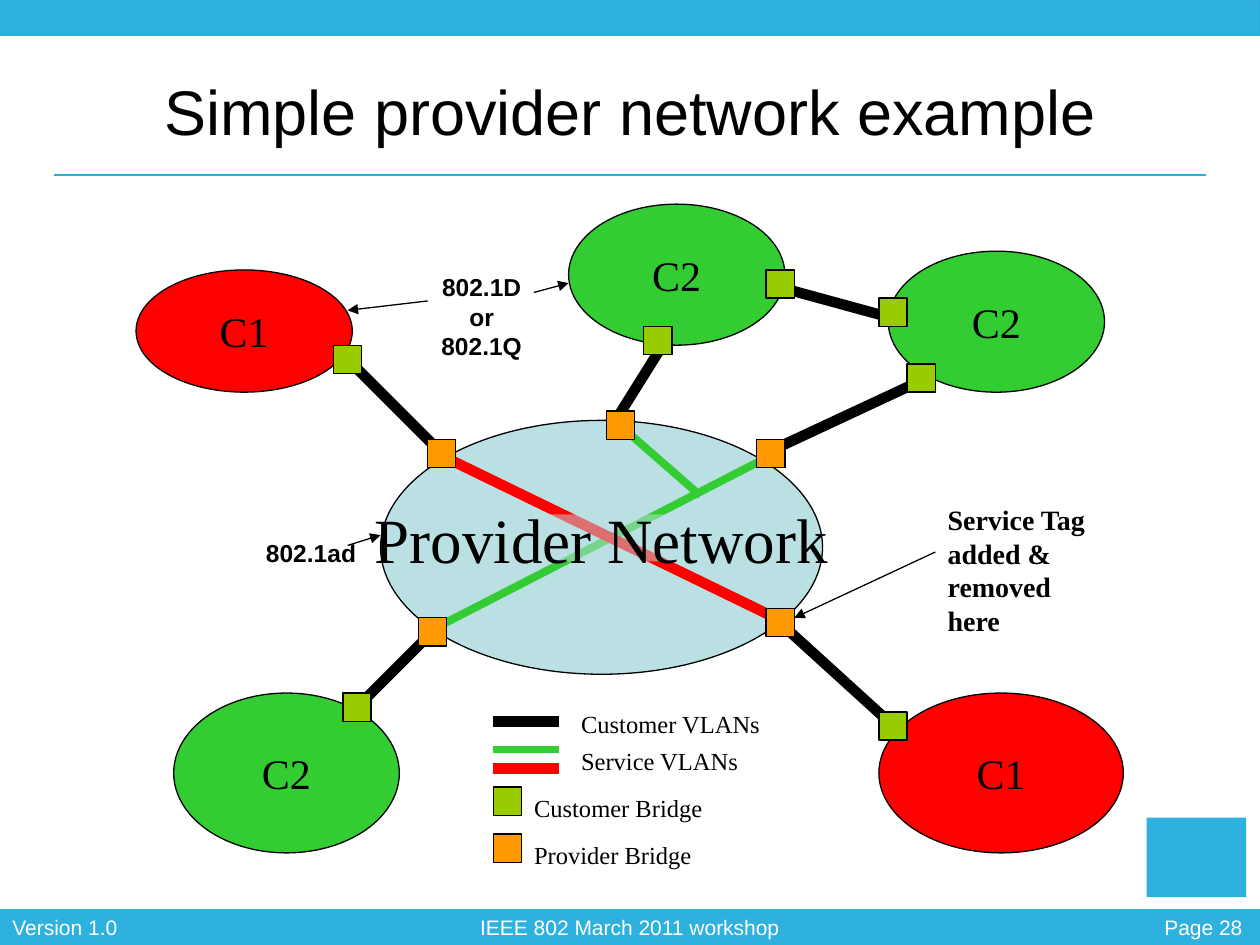
from pptx import Presentation
from pptx.dml.color import RGBColor
from pptx.enum.shapes import MSO_CONNECTOR, MSO_SHAPE
from pptx.enum.text import MSO_ANCHOR, PP_ALIGN
from pptx.oxml.ns import qn
from pptx.util import Inches, Pt
from lxml.etree import SubElement

BLACK = RGBColor(0x00, 0x00, 0x00)
WHITE = RGBColor(0xFF, 0xFF, 0xFF)
BAR_BLUE = RGBColor(0x2F, 0xB1, 0xDF)
RULE_BLUE = RGBColor(0x2F, 0xAD, 0xDF)
GREEN = RGBColor(0x33, 0xCC, 0x33)
RED = RGBColor(0xFF, 0x00, 0x00)
PALE_BLUE = RGBColor(0xBB, 0xE0, 0xE3)
LIME = RGBColor(0x99, 0xCC, 0x00)
ORANGE = RGBColor(0xFF, 0x99, 0x00)

SANS, SERIF = "Arial", "Times New Roman"
WIDTH, HEIGHT = Inches(10), Inches(7.5)
UNIT = WIDTH / 134
LEFT, TOP = Inches(1.08), Inches(1.62)
BAR_HEIGHT = Inches(0.28)
FOOTER_TOP, FOOTER_HEIGHT = Inches(7.21), Inches(0.3)
BRIDGE = 3


def grid(col, row):
    return round(LEFT + col * UNIT), round(TOP + row * UNIT)


def grid_box(col, row, cols, rows):
    return *grid(col, row), round(cols * UNIT), round(rows * UNIT)


def write(sp, text, size, font=SERIF, color=BLACK, bold=False,
          align=PP_ALIGN.LEFT, anchor=MSO_ANCHOR.TOP, wrap=False):
    tf = sp.text_frame
    tf.text = text
    tf.word_wrap = wrap
    tf.vertical_anchor = anchor
    for p in tf.paragraphs:
        p.alignment = align
        for r in p.runs:
            r.font.size = Pt(size)
            r.font.name = font
            r.font.bold = bold
            r.font.color.rgb = color


def add_text(s, box, text, size, **style):
    write(s.shapes.add_textbox(*box), text, size, **style)


def add_block(s, kind, box, fill, line=None, text="", size=24):
    sp = s.shapes.add_shape(kind, *box)
    sp.shadow.inherit = False
    sp.fill.solid()
    sp.fill.fore_color.rgb = fill
    if line is None:
        sp.line.fill.background()
    else:
        sp.line.color.rgb = line
        sp.line.width = Pt(0.75)
    if text:
        write(sp, text, size, align=PP_ALIGN.CENTER, anchor=MSO_ANCHOR.MIDDLE)
    return sp


def add_line(s, start, end, color=BLACK, width=0.75, arrow=False):
    c = s.shapes.add_connector(MSO_CONNECTOR.STRAIGHT, *start, *end)
    c.line.color.rgb = color
    c.line.width = Pt(width)
    if arrow:
        SubElement(c.line._get_or_add_ln(), qn("a:tailEnd"), type="triangle")
    SubElement(c._element.spPr, qn("a:effectLst"))


def add_frame(s):
    for y, line in ((HEIGHT - BAR_HEIGHT, BAR_BLUE), (0, RULE_BLUE)):
        add_block(s, MSO_SHAPE.RECTANGLE, (0, y, WIDTH, BAR_HEIGHT), BAR_BLUE, line)
    add_line(s, (Inches(0.43), Inches(1.39)), (Inches(9.57), Inches(1.39)), RULE_BLUE)
    for text, x, w, align in [
        ("Version 1.0", 0, 1.2, PP_ALIGN.LEFT),
        ("IEEE 802 March 2011 workshop", 0, 10, PP_ALIGN.CENTER),
        ("Page 28", 8.7, 1.26, PP_ALIGN.RIGHT),
    ]:
        add_text(s, (Inches(x), FOOTER_TOP, Inches(w), FOOTER_HEIGHT), text, 12,
                 font=SANS, color=WHITE, align=align, wrap=True)
    emblem = Inches(9.1), Inches(6.49), Inches(0.79), Inches(0.63)
    add_block(s, MSO_SHAPE.RECTANGLE, emblem, BAR_BLUE)


def add_title(s, text):
    title = s.shapes.title
    title.left, title.top = Inches(0.5), Inches(0.44)
    title.width, title.height = Inches(9), Inches(0.87)
    write(title, text, 36, font=SANS, align=PP_ALIGN.CENTER,
          anchor=MSO_ANCHOR.MIDDLE, wrap=True)


def add_networks(s):
    for text, fill, *cells in [
        ("C2", GREEN, 4, 52, 24, 17),
        ("C2", GREEN, 80, 5, 23, 15),
        ("C2", GREEN, 46, 0, 23, 15),
        ("C1", RED, 79, 52, 26, 17),
        ("C1", RED, 0, 7, 23, 13),
        ("", PALE_BLUE, 26, 23, 47, 27),
    ]:
        add_block(s, MSO_SHAPE.OVAL, grid_box(*cells), fill, BLACK, text)


def add_vlans(s):
    for color, width, start, end in [
        (BLACK, 6, (24, 53), (31, 46)),
        (BLACK, 6, (23, 17), (32, 26)),
        (BLACK, 6, (68, 26), (83, 19)),
        (BLACK, 6, (69, 45), (80, 55)),
        (BLACK, 6, (51, 23), (56, 15)),
        (BLACK, 6, (80, 12), (69, 9)),
        (GREEN, 4.5, (32, 45), (67, 27)),
        (GREEN, 4.5, (60, 31), (52, 24)),
        (RED, 6, (33, 27), (68, 44)),
        (BLACK, 6, (38, 55), (45, 55)),
        (GREEN, 4.5, (38, 58), (45, 58)),
        (RED, 6, (38, 60), (45, 60)),
    ]:
        add_line(s, grid(*start), grid(*end), color, width)


def add_provider_label(s):
    sp = add_block(s, MSO_SHAPE.RECTANGLE, grid_box(34, 33, 31, 5), PALE_BLUE,
                   text="Provider Network", size=36)
    color = sp._element.spPr.find(qn("a:solidFill"))[0]
    SubElement(color, qn("a:alpha"), val="50000")


def add_bridges(s):
    provider = [(30, 44), (66, 25), (31, 25), (67, 43), (50, 22), (38, 67)]
    customer = [(21, 15), (82, 17), (79, 54), (22, 52), (54, 13), (67, 7), (79, 10), (38, 62)]
    for fill, cells in ((ORANGE, provider), (LIME, customer)):
        for col, row in cells:
            add_block(s, MSO_SHAPE.RECTANGLE, grid_box(col, row, BRIDGE, BRIDGE), fill, BLACK)


def add_legend_labels(s):
    for text, col, row in [
        ("Customer VLANs", 46, 53),
        ("Service VLANs", 46, 57),
        ("Customer Bridge", 41, 62),
        ("Provider Bridge", 41, 67),
    ]:
        add_text(s, grid_box(col, row, 24, 4.4), text, 14, wrap=True)


def add_notes(s):
    add_text(s, grid_box(85, 31.1, 19.7, 15.7), "Service Tag added & removed here", 16,
             bold=True, wrap=True)
    add_text(s, grid_box(12.5, 34.9, 14, 4.4), "802.1ad", 14, font=SANS, bold=True, wrap=True)
    add_text(s, grid_box(29.6, 6.6, 14.3, 7.6), "802.1D or\n802.1Q", 14, font=SANS,
             bold=True, align=PP_ALIGN.CENTER, wrap=True)
    for start, end in [
        ((85, 37), (70, 44)),
        ((22.5, 36.3), (26, 35.2)),
        ((42.3, 9.4), (46, 8.4)),
        ((31, 10.3), (22.5, 11.3)),
    ]:
        add_line(s, grid(*start), grid(*end), arrow=True)


def main():
    prs = Presentation()
    prs.slide_width, prs.slide_height = WIDTH, HEIGHT
    s = prs.slides.add_slide(prs.slide_layouts[5])
    add_frame(s)
    add_title(s, "Simple provider network example")
    add_networks(s)
    add_vlans(s)
    add_provider_label(s)
    add_bridges(s)
    add_legend_labels(s)
    add_notes(s)
    prs.save("out.pptx")


if __name__ == "__main__":
    main()
